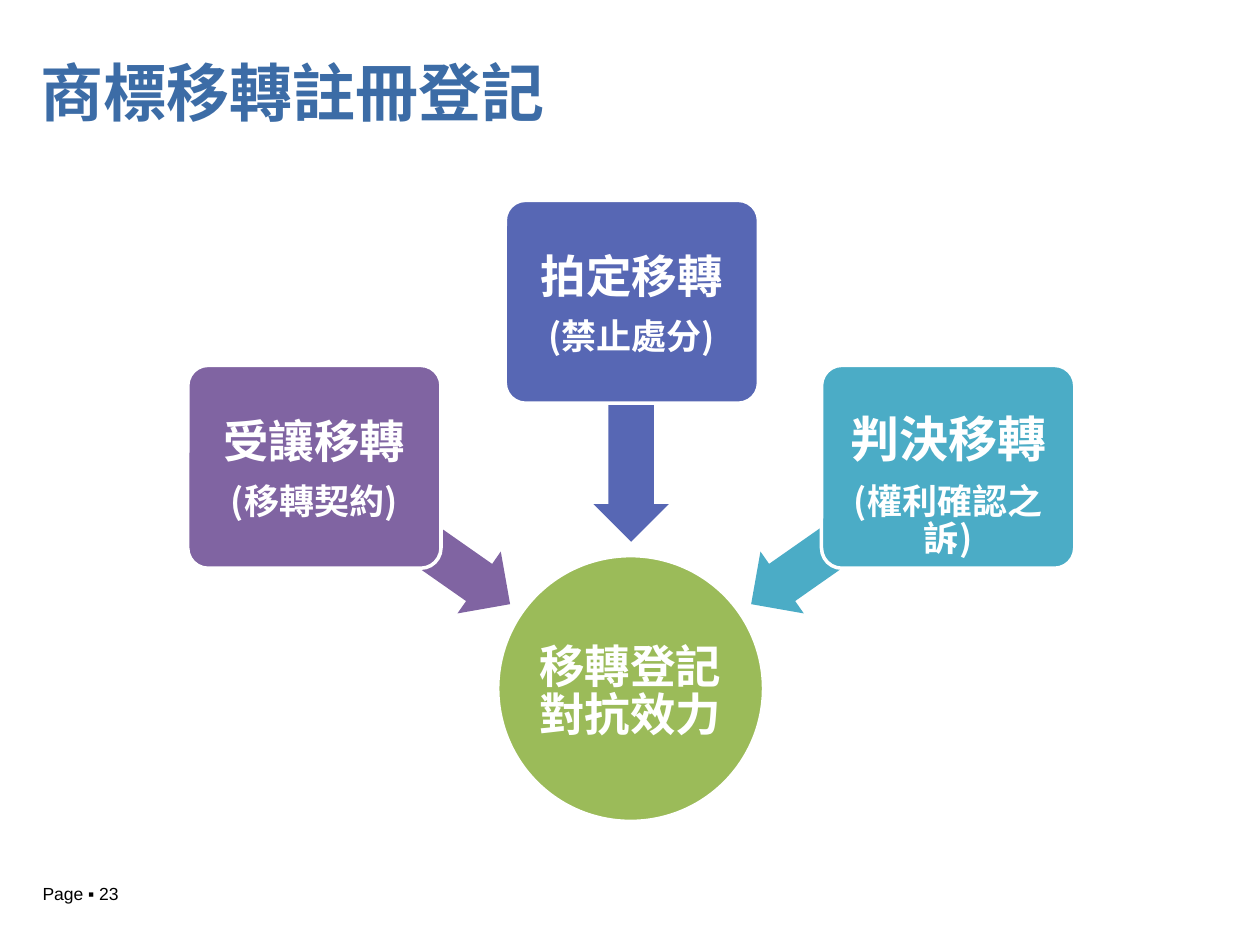
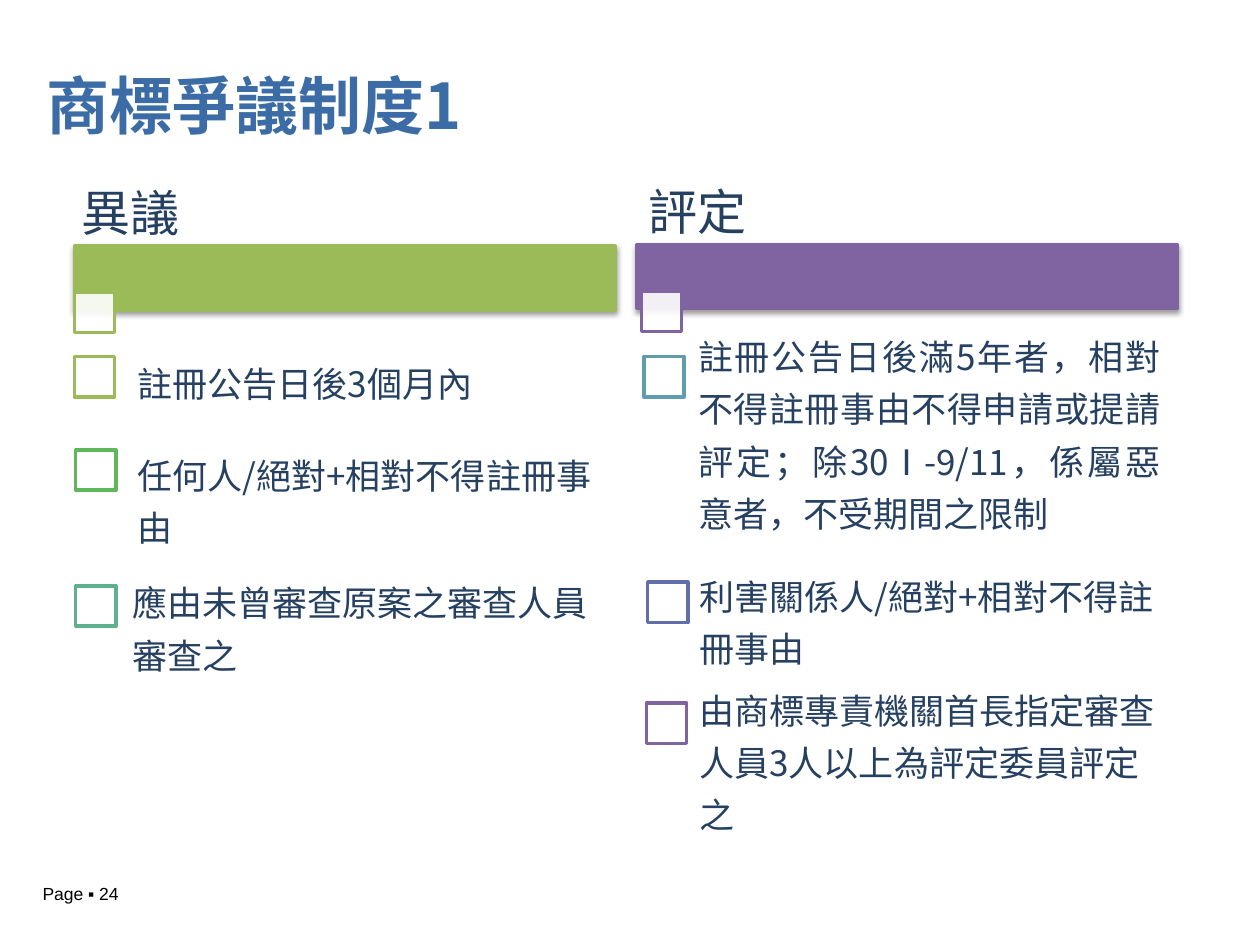
from lxml.etree import SubElement as Sub
from pptx import Presentation
from pptx.dml.color import RGBColor
from pptx.enum.shapes import MSO_SHAPE as Form
from pptx.enum.text import MSO_ANCHOR as Anchor, PP_ALIGN as Align
from pptx.oxml.ns import qn
from pptx.util import Inches, Pt

FONT = "Noto Sans CJK SC"
BLUE, NAVY, WHITE, BLACK = "3C6CA6", "254061", "FFFFFF", "000000"
GREEN, PURPLE, INDIGO, TEAL = "9BBB59", "8064A2", "5767B4", "4BACC6"
DROP = 0.03  # lowers text a little inside its box


def color(code):
    return RGBColor.from_string(code)


def write(shape, *lines, font=FONT, ink=NAVY, bold=False, align=Align.LEFT,
          anchor=Anchor.MIDDLE, pad=(0.1, 0.05), drop=DROP, gap=10):
    """Fill a shape with lines, each given as (text, size, line spacing)."""
    frame = shape.text_frame
    frame.word_wrap = True
    frame.vertical_anchor = anchor
    frame.margin_left = frame.margin_right = Inches(pad[0])
    frame.margin_top = Inches(pad[1] + 2 * drop)
    frame.margin_bottom = Inches(pad[1])
    for i, (text, size, pitch) in enumerate(lines):
        para = frame.add_paragraph() if i else frame.paragraphs[0]
        para.alignment = align
        para.line_spacing = Pt(pitch)
        if i:
            para.space_before = Pt(gap)
        run = para.add_run()
        run.text = text
        run.font.name, run.font.size, run.font.bold = font, Pt(size), bold
        run.font.color.rgb = color(ink)
        Sub(run.font._element, qn("a:ea"), typeface=font)


def label(slide, box, *lines, **style):
    write(slide.shapes.add_textbox(*map(Inches, box)), *lines, **style)


def draw(slide, form, box, fill, line=None, adj=(), turn=0):
    shape = slide.shapes.add_shape(form, *map(Inches, box))
    shape.shadow.inherit = False
    shape.fill.solid()
    shape.fill.fore_color.rgb = color(fill)
    if line:
        shape.line.color.rgb = color(line)
        shape.line.width = Pt(2)
    else:
        shape.line.fill.background()
    for i, value in enumerate(adj):
        shape.adjustments[i] = value
    shape.rotation = turn
    return shape


def fade(shape, percent):
    """Make a solid fill partly see-through."""
    tint = shape.fill._xPr.find(qn("a:solidFill"))[0]
    Sub(tint, qn("a:alpha"), val=str(percent * 1000))


def shade(shape):
    """Put a soft shadow below a shape."""
    effect = shape._element.spPr.find(qn("a:effectLst"))
    cast = Sub(effect, qn("a:outerShdw"), blurRad=str(Pt(3.1)), dist=str(Pt(1.6)),
               dir="5400000", rotWithShape="0")
    Sub(Sub(cast, qn("a:srgbClr"), val=BLACK), qn("a:alpha"), val="38000")


def start(deck, title, left, top, page):
    """Add a slide with its title and page number."""
    slide = deck.slides.add_slide(deck.slide_layouts[6])
    label(slide, (left, top, 6.69, 0.83), (title, 36, 75), ink=BLUE, bold=True)
    label(slide, (0.24, 6.96, 1.47, 0.27), (f"Page ▪ {page}", 10, 12),
          font="Arial", ink=BLACK, anchor=Anchor.TOP, drop=0)
    return slide


def node(slide, left, top, tone, head, note, size=26, drop=DROP):
    """Rounded card with a heading and a note."""
    card = draw(slide, Form.ROUNDED_RECTANGLE, (left, top, 2.01, 1.61),
                tone, WHITE, [0.1])
    write(card, (head, size, size * 1.06), (note, 20, 21), ink=WHITE, bold=True,
          align=Align.CENTER, pad=(0.05, 0.05), drop=drop)


def hub(slide, left, top):
    """Round goal of the three arrows."""
    disc = draw(slide, Form.OVAL, (left, top, 2.11, 2.11), GREEN, WHITE)
    write(disc, ("移轉登記對抗效力", 26, 27.5), ink=WHITE, bold=True,
          align=Align.CENTER, pad=(0.02, 0.02))


def column(slide, left, top, tone, inset, head, items):
    """Heading, colour bar and ticked items; items sit relative to the bar."""
    bar = draw(slide, Form.RECTANGLE, (left, top, 4.29, 0.51), tone, tone)
    shade(bar)
    tick = draw(slide, Form.RECTANGLE, (left + inset, top + 0.37, 0.32, 0.32), WHITE, tone)
    fade(tick, 90)
    label(slide, (left + inset, top - 0.55, 4.29, 0.56), (head, 28, 29.6), pad=(0.06, 0.04))
    for text, edge, tick_x, tick_y, text_x, text_y, high, pitch, align in items:
        draw(slide, Form.RECTANGLE, (left + tick_x, top + tick_y, 0.32, 0.32), WHITE, edge)
        label(slide, (left + text_x, top + text_y, 3.99, high), (text, 20, pitch),
              align=align, pad=(0.16, 0.16))


def transfer(deck):
    slide = start(deck, "商標移轉註冊登記", 0.22, 0.06, 23)
    hub(slide, 3.95, 4.41)
    # Each arrow lies under its card
    for x, y, tone, head, note, arrow_x, arrow_y, turn, style in (
            (1.49, 2.9, PURPLE, "受讓移轉", "(移轉契約)", 2.32, 3.95, 215, {}),
            (4.01, 1.59, INDIGO, "拍定移轉", "(禁止處分)", 4.06, 3.05, 270, {}),
            (6.52, 2.9, TEAL, "判決移轉", "(權利確認之訴)", 5.79, 3.95, 325,
             {"size": 28, "drop": 0.16})):
        draw(slide, Form.LEFT_ARROW, (arrow_x, arrow_y, 1.9, 0.6), tone,
             adj=(0.6, 0.5), turn=turn)
        node(slide, x, y, tone, head, note, **style)


def dispute(deck):
    slide = start(deck, "商標爭議制度1", 0.27, 0.16, 24)
    left, both = Align.LEFT, Align.JUSTIFY
    # Item: text, edge, tick x and y, text x and y, height, line pitch, alignment
    column(slide, 0.59, 1.95, GREEN, 0, "異議", (
        ("註冊公告日後3個月內", GREEN, 0, 0.88, 0.34, 0.69, 0.74, 24, left),
        ("任何人/絕對+相對不得註冊事由", "5FB65B", 0.01, 1.62, 0.34, 1.59, 0.74, 30, left),
        ("應由未曾審查原案之審查人員審查之", "5DB18E", 0.01, 2.7, 0.3, 2.6, 0.74, 30, left)))
    column(slide, 5.05, 1.94, PURPLE, 0.04, "評定", (
        ("註冊公告日後滿5年者，相對不得註冊事由不得申請或提請評定；"
         "除30Ⅰ-9/11，係屬惡意者，不受期間之限制",
         "5F9DAC", 0.06, 0.89, 0.33, 0.79, 1.3, 30, both),
        ("利害關係人/絕對+相對不得註冊事由", "626EA7", 0.09, 2.68, 0.34, 2.56, 0.74, 30, left),
        ("由商標專責機關首長指定審查人員3人以上為評定委員評定之",
         PURPLE, 0.08, 3.64, 0.34, 3.67, 0.74, 30, left)))


def main():
    deck = Presentation()
    deck.slide_width, deck.slide_height = Inches(10), Inches(7.5)
    transfer(deck)
    dispute(deck)
    deck.save("out.pptx")


if __name__ == "__main__":
    main()
